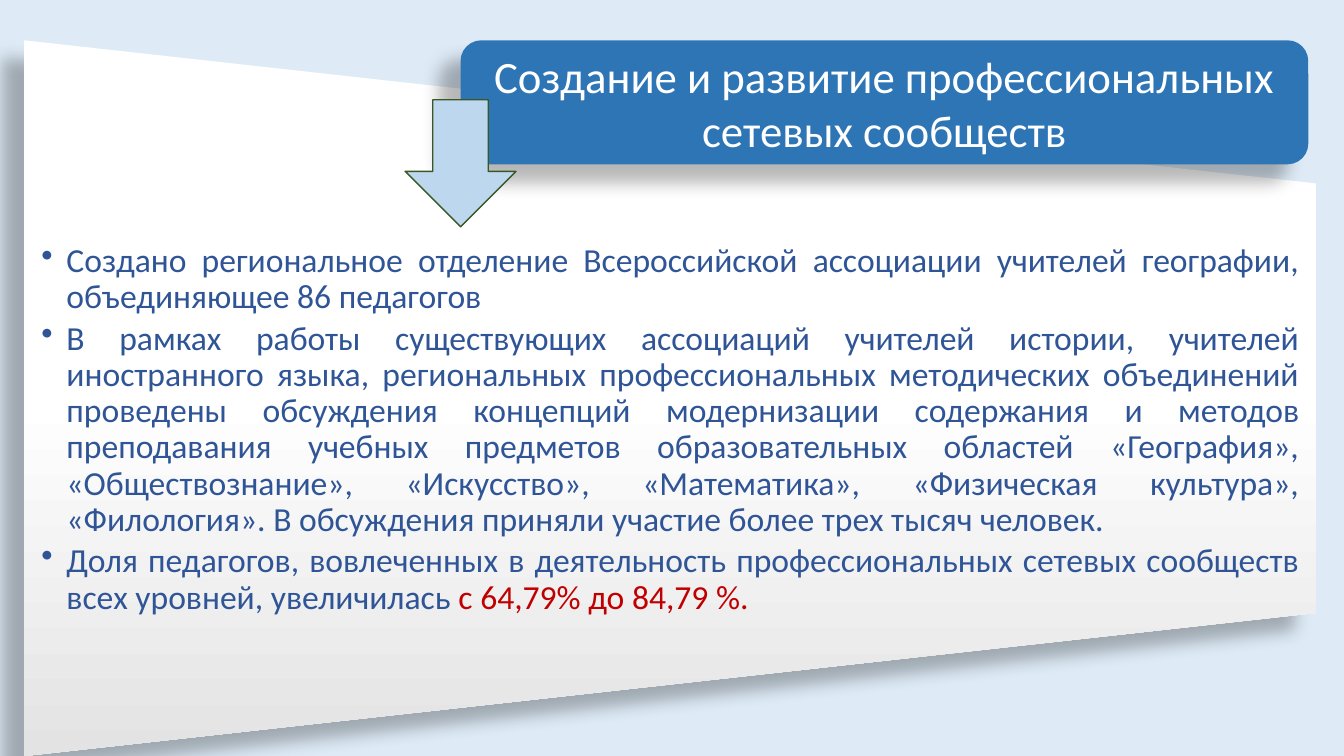
from dataclasses import dataclass
from typing import Optional

from lxml import etree
from pptx import Presentation
from pptx.dml.color import RGBColor
from pptx.enum.shapes import MSO_SHAPE
from pptx.enum.text import MSO_ANCHOR, PP_ALIGN
from pptx.oxml import parse_xml
from pptx.oxml.ns import nsdecls, qn
from pptx.util import Pt

PANEL = MSO_SHAPE.FLOWCHART_MANUAL_OPERATION
ROUND = MSO_SHAPE.ROUNDED_RECTANGLE
ARROW = MSO_SHAPE.DOWN_ARROW
MIDDLE = MSO_ANCHOR.MIDDLE
CENTER = PP_ALIGN.CENTER
JUSTIFY = PP_ALIGN.JUSTIFY

FONT = "Calibri"
COLORS = {
    "back": "DEEBF7",
    "white": "FFFFFF",
    "grey": "E3E3E3",
    "title": "2E75B6",
    "arrow": "BDD7EE",
    "edge": "385723",
    "body": "2F5597",
    "accent": "C00000",
    "shade": "000000",
}


@dataclass
class Block:
    kind: MSO_SHAPE
    left: float
    top: float
    width: float
    height: float
    fill: Optional[str] = None
    line: Optional[str] = None
    shade: bool = False
    turn: float = 0
    text: str = ""


@dataclass
class Point:
    text: str
    accent: str = ""


BLOCKS = [
    Block(PANEL, 223.2, -177.1, 511.2, 923, shade=True, turn=270),
    Block(ROUND, 329, 28.8, 605.5, 88.6, "title", shade=True,
          text="Создание и развитие профессиональных сетевых сообществ"),
    Block(ARROW, 289.4, 71.3, 79.2, 90.7, "arrow", "edge"),
]

POINTS = [
    Point("Создано региональное отделение Всероссийской ассоциации учителей "
          "географии, объединяющее 86 педагогов"),
    Point("В рамках работы существующих ассоциаций учителей истории, учителей "
          "иностранного языка, региональных профессиональных методических "
          "объединений проведены обсуждения концепций модернизации содержания "
          "и методов преподавания учебных предметов образовательных областей "
          "«География», «Обществознание», «Искусство», «Математика», "
          "«Физическая культура», «Филология». В обсуждения приняли участие "
          "более трех тысяч человек."),
    Point("Доля педагогов, вовлеченных в деятельность профессиональных "
          "сетевых сообществ всех уровней, увеличилась ",
          "с 64,79% до 84,79 %."),
]


def color(name: str) -> RGBColor:
    return RGBColor.from_string(COLORS[name])


def style(run, size: float, name: str) -> None:
    run.font.name = FONT
    run.font.size = Pt(size)
    run.font.color.rgb = color(name)


def add_fade(shape) -> None:
    stops = "".join(
        f'<a:gs pos="{pos * 1000}"><a:srgbClr val="{COLORS[name]}"/></a:gs>'
        for pos, name in [(0, "white"), (50, "white"), (100, "grey")])
    fade = parse_xml(
        f'<a:gradFill {nsdecls("a")} rotWithShape="0"><a:gsLst>{stops}</a:gsLst>'
        '<a:lin ang="5400000" scaled="0"/></a:gradFill>')
    shape._element.spPr.find(qn("a:prstGeom")).addnext(fade)


def add_shade(shape) -> None:
    effects = shape._element.spPr.find(qn("a:effectLst"))
    shade = etree.SubElement(
        effects, qn("a:outerShdw"), blurRad=str(Pt(11.8)), dist=str(Pt(19.7)),
        dir=str(141 * 60000), algn="ctr", rotWithShape="0")
    tint = etree.SubElement(shade, qn("a:srgbClr"), val=COLORS["shade"])
    etree.SubElement(tint, qn("a:alpha"), val="28000")


def add_block(slide, block: Block) -> None:
    shape = slide.shapes.add_shape(
        block.kind, Pt(block.left), Pt(block.top),
        Pt(block.width), Pt(block.height))
    shape.rotation = block.turn
    shape.shadow.inherit = False
    if block.fill:
        shape.fill.solid()
        shape.fill.fore_color.rgb = color(block.fill)
    else:
        add_fade(shape)
    if block.line:
        shape.line.color.rgb = color(block.line)
        shape.line.width = Pt(1)
    else:
        shape.line.fill.background()
    if block.shade:
        add_shade(shape)
    if block.text:
        frame = shape.text_frame
        frame.word_wrap = True
        frame.vertical_anchor = MIDDLE
        frame.text = block.text
        para = frame.paragraphs[0]
        para.alignment = CENTER
        style(para.runs[0], 32, "white")


def add_point(para, point: Point) -> None:
    para.text = point.text
    style(para.runs[0], 24, "body")
    if point.accent:
        run = para.add_run()
        run.text = point.accent
        style(run, 24, "accent")
    para.alignment = JUSTIFY
    para.line_spacing = 0.9
    para.space_after = Pt(3.6)
    props = para._p.get_or_add_pPr()
    props.set("marL", str(Pt(18)))
    props.set("indent", str(Pt(-18)))
    etree.SubElement(props, qn("a:buChar"), char="•")


def add_list(slide, points: list[Point]) -> None:
    box = slide.shapes.add_textbox(Pt(17.3), Pt(131), Pt(923), Pt(306.7))
    frame = box.text_frame
    frame.word_wrap = True
    frame.margin_left = frame.margin_right = Pt(12.2)
    frame.margin_top = Pt(43)
    frame.margin_bottom = Pt(0)
    for index, point in enumerate(points):
        para = frame.add_paragraph() if index else frame.paragraphs[0]
        add_point(para, point)


def main() -> None:
    deck = Presentation()
    deck.slide_width = Pt(960)
    deck.slide_height = Pt(540)
    slide = deck.slides.add_slide(deck.slide_layouts[6])
    slide.background.fill.solid()
    slide.background.fill.fore_color.rgb = color("back")
    panel, title, arrow = BLOCKS
    add_block(slide, panel)
    add_list(slide, POINTS)
    add_block(slide, title)
    add_block(slide, arrow)
    deck.save("out.pptx")


if __name__ == "__main__":
    main()
